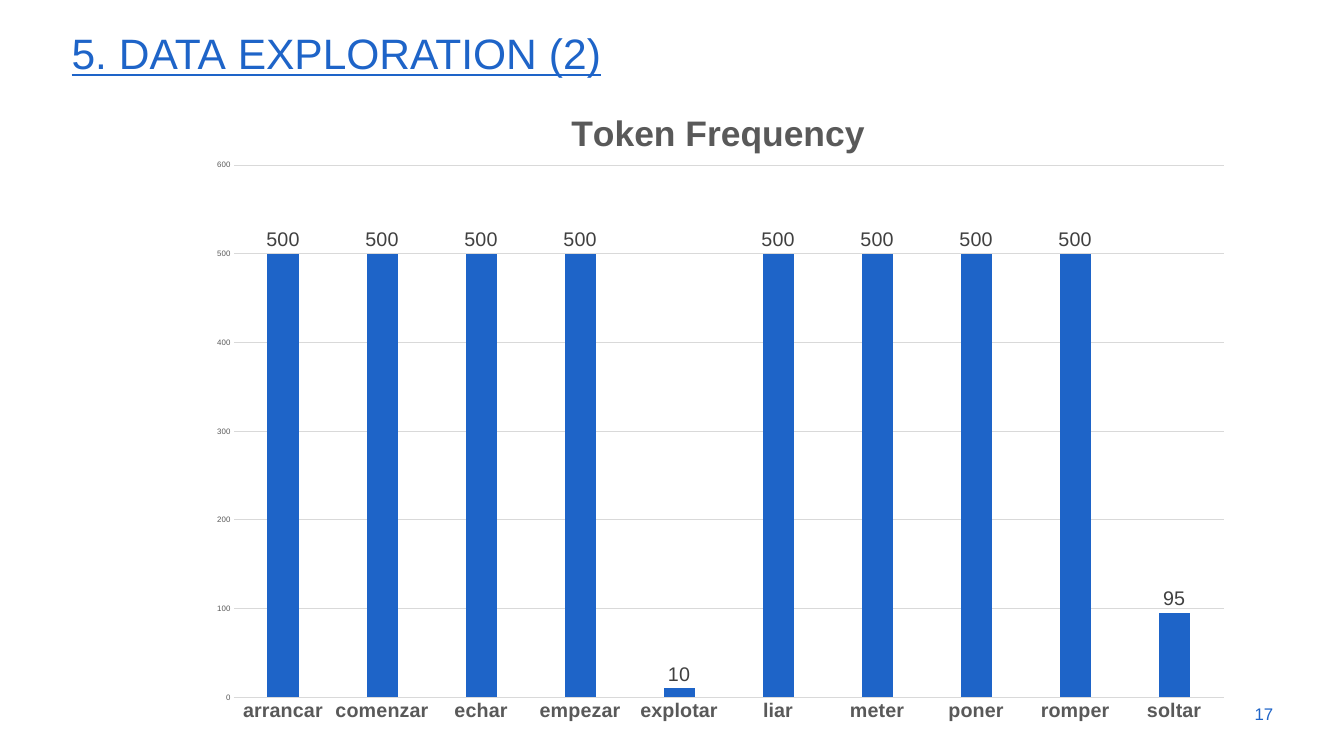
from lxml import etree
from pptx import Presentation
from pptx import util as u
from pptx.chart.data import CategoryChartData
from pptx.dml.color import RGBColor
from pptx.enum import chart as ch, text

from pptx.oxml.ns import qn

BLUE = RGBColor(0x1E, 0x64, 0xC8)
WHITE = RGBColor(0xFF, 0xFF, 0xFF)
DARK_GRAY = RGBColor(0x40, 0x40, 0x40)
GRAY = RGBColor(0x59, 0x59, 0x59)
LIGHT_GRAY = RGBColor(0xD9, 0xD9, 0xD9)

TOKEN_COUNTS = {
    "arrancar": 500, "comenzar": 500, "echar": 500, "empezar": 500, "explotar": 10,
    "liar": 500, "meter": 500, "poner": 500, "romper": 500, "soltar": 95,
}


class Deck:
    """Hold the style and the current slide, and add elements to it."""

    font_name = "Arial"

    def __init__(self, width, height):
        self.prs = Presentation()
        self.prs.slide_width, self.prs.slide_height = u.Inches(width), u.Inches(height)
        self.slide = self.prs.slides.add_slide(self.prs.slide_layouts[5])
        self.slide.background.fill.solid()
        self.slide.background.fill.fore_color.rgb = WHITE

    def style(self, font, size, color, bold=False):
        font.name, font.size, font.bold = self.font_name, u.Pt(size), bold
        font.color.rgb = color

    def add_words(self, shape, words, size, align, anchor):
        frame = shape.text_frame
        frame.word_wrap = True
        frame.auto_size = text.MSO_AUTO_SIZE.NONE
        frame.vertical_anchor = anchor
        paragraph = frame.paragraphs[0]
        paragraph.alignment = align
        run = paragraph.add_run()
        run.text = words
        self.style(run.font, size, BLUE)
        return paragraph, run

    def title(self, words, left, top, width, height):
        heading = self.slide.shapes.title
        heading.left, heading.top = u.Inches(left), u.Inches(top)
        heading.width, heading.height = u.Inches(width), u.Inches(height)
        paragraph, run = self.add_words(
            heading, words, 54, text.PP_ALIGN.LEFT, text.MSO_ANCHOR.TOP)
        paragraph.line_spacing = 0.9
        run.font.underline = True
        run.font._element.set("cap", "small")

    def page_number(self, number, left, top, width, height):
        box = self.slide.shapes.add_textbox(*map(u.Inches, (left, top, width, height)))
        self.add_words(box, number, 17.1, text.PP_ALIGN.RIGHT, text.MSO_ANCHOR.MIDDLE)

    def column_chart(self, heading, counts, left, top, width, height):
        data = CategoryChartData()
        data.categories = list(counts)
        data.add_series("Series 1", list(counts.values()))
        chart = self.slide.shapes.add_chart(
            ch.XL_CHART_TYPE.COLUMN_CLUSTERED,
            *map(u.Inches, (left, top, width, height)), data).chart
        chart.has_legend = False
        chart.font.name, chart.font.size = self.font_name, u.Pt(10)
        chart.has_title = True
        title_run = chart.chart_title.text_frame.paragraphs[0].add_run()
        title_run.text = heading
        self.style(title_run.font, 36, GRAY, bold=True)
        self.format_axes(chart)
        self.format_columns(chart.plots[0])
        self.place_plot(chart, x=0.04, y=0.12, w=0.94, h=0.82)

    def format_axes(self, chart):
        tokens, frequency = chart.category_axis, chart.value_axis
        for axis in (tokens, frequency):
            axis.major_tick_mark = axis.minor_tick_mark = ch.XL_TICK_MARK.NONE
        self.style(tokens.tick_labels.font, 20, GRAY, bold=True)
        self.style(frequency.tick_labels.font, 8, GRAY)
        frequency.minimum_scale, frequency.maximum_scale = 0, 600
        frequency.major_unit = 100
        frequency.format.line.fill.background()
        frequency.has_major_gridlines = True
        for line in (tokens.format.line, frequency.major_gridlines.format.line):
            line.color.rgb = LIGHT_GRAY
            line.width = u.Pt(0.75)

    def format_columns(self, plot):
        plot.gap_width, plot.overlap = 219, -27
        plot.vary_by_categories = False
        columns = plot.series[0]
        columns.format.fill.solid()
        columns.format.fill.fore_color.rgb = BLUE
        labels = columns.data_labels
        labels.show_value = True
        labels.position = ch.XL_LABEL_POSITION.OUTSIDE_END
        self.style(labels.font, 20, DARK_GRAY)

    def place_plot(self, chart, **fractions):
        area = chart._chartSpace.find(".//" + qn("c:plotArea"))
        for automatic in area.findall(qn("c:layout")):
            area.remove(automatic)
        layout = etree.Element(qn("c:layout"))
        area.insert(0, layout)
        manual = etree.SubElement(layout, qn("c:manualLayout"))
        settings = {"layoutTarget": "inner", "xMode": "edge", "yMode": "edge", **fractions}
        for tag, value in settings.items():
            etree.SubElement(manual, qn("c:" + tag)).set("val", str(value))


def main():
    deck = Deck(18.96, 10.67)
    deck.title("5. data exploration (2)", 0.91, 0.28, 17.18, 0.94)
    deck.page_number("17", 17.05, 9.79, 1.01, 0.57)
    deck.column_chart("Token Frequency", TOKEN_COUNTS, 2.7, 1.23, 14.86, 9.16)
    deck.prs.save("out.pptx")


if __name__ == "__main__":
    main()
